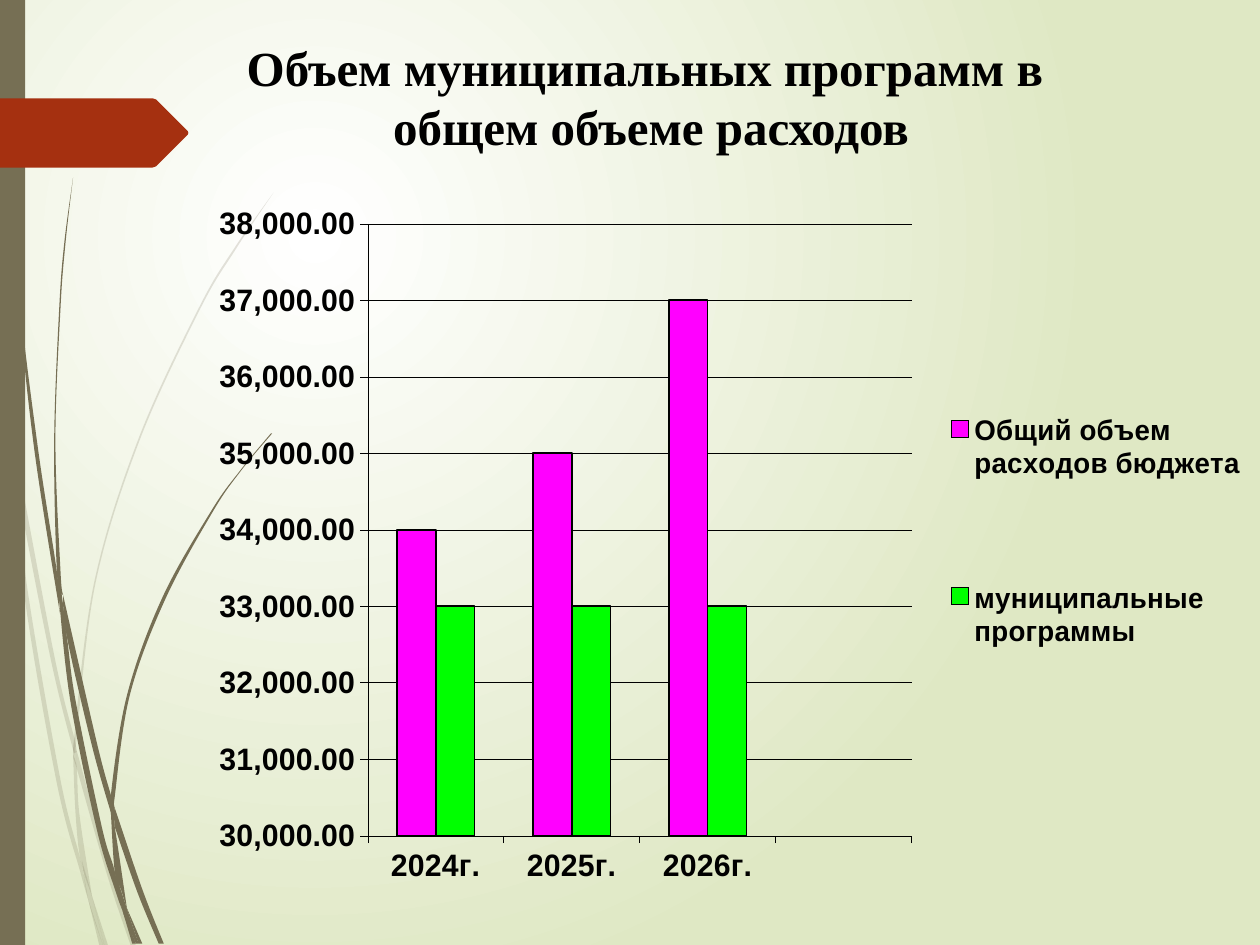
import pptx
import pptx.chart.data
import pptx.dml.color
import pptx.enum.chart
import pptx.enum.shapes
import pptx.enum.text
import pptx.oxml.ns
import pptx.util
from lxml import etree

Pt = pptx.util.Pt
qn = pptx.oxml.ns.qn

COLOURS = {
    "white": "FFFFFF", "sage": "DFE8C4", "olive": "766F54", "rust": "A53010",
    "ink": "000000", "magenta": "FF00FF", "green": "00FF00",
}
GRID = 0.72  # points in one unit of the outline coordinates below

# Each blade of grass is two edges: one out, one back
PALE_BLADES = [
    ([(8, 350), (6, 322), (0, 282)], [(0, 299), (7, 344), (8, 350)]),
    ([(10, 345), (43, 520), (59, 586)], [(59, 599), (40, 522), (12, 376), (10, 345)]),
    ([(61, 596), (88, 692), (108, 751)], [(104, 751), (85, 694), (61, 610)]),
    ([(73, 711), (86, 751)], [(83, 751), (73, 711)]),
    ([(8, 350), (12, 376), (22, 469), (48, 619), (64, 683), (70, 714)],
     [(70, 714), (64, 693), (45, 621), (19, 470), (8, 350)]),
    ([(58, 599), (61, 610), (63, 646), (73, 711)],
     [(73, 711), (64, 683), (60, 646), (58, 599)]),
    ([(61, 596), (61, 584), (76, 462), (111, 349), (159, 245), (187, 198), (217, 153)],
     [(217, 153), (186, 197), (158, 244), (110, 348), (75, 461), (59, 584), (61, 596)]),
    ([(70, 714), (82, 751)], [(79, 751), (70, 714)]),
    ([(59, 586), (61, 596), (61, 610)], [(61, 610), (58, 599), (59, 586)]),
    ([(65, 683), (73, 711), (83, 751)], [(82, 751), (70, 714), (65, 683)]),
]
DARK_BLADES = [
    ([(3, 0), (4, 48), (6, 109), (15, 232), (30, 355), (45, 453), (47, 481)],
     [(47, 481), (46, 477), (27, 355), (14, 233), (5, 110), (3, 48), (2, 0)]),
    ([(50, 472), (77, 590), (88, 631)], [(88, 645), (73, 592), (53, 505), (50, 472)]),
    ([(91, 641), (113, 706), (130, 749)], [(126, 749), (109, 708), (91, 656)]),
    ([(47, 477), (53, 505), (60, 556), (81, 657), (91, 691), (97, 722)],
     [(97, 722), (92, 708), (77, 659), (56, 557), (47, 477)]),
    ([(50, 472), (48, 453), (44, 349), (48, 245), (52, 193), (58, 141)],
     [(58, 141), (51, 193), (47, 245), (43, 349), (45, 449), (49, 472)]),
    ([(100, 719), (113, 749)], [(110, 749), (100, 719)]),
    ([(45, 449), (49, 472), (53, 505)], [(53, 505), (47, 477), (45, 449)]),
    ([(91, 641), (91, 633), (103, 552), (131, 476), (169, 406), (191, 374), (216, 344)],
     [(215, 344), (191, 373), (168, 405), (129, 474), (101, 551), (88, 631), (91, 641)]),
    ([(97, 722), (108, 749)], [(105, 749), (97, 722)]),
    ([(88, 645), (91, 656), (100, 716), (100, 719)],
     [(100, 719), (96, 706), (91, 691), (88, 645)]),
    ([(88, 631), (91, 641), (91, 656)], [(91, 656), (88, 645), (88, 631)]),
    ([(91, 691), (100, 719), (110, 749)], [(108, 749), (97, 722), (91, 691)]),
]
ARROW_TAG = [(0, 78), (121, 78), (124, 79), (149, 104), (149.5, 105.5),
             (149, 107), (124, 132), (121, 133), (0, 133)]


def rgb(name):
    return pptx.dml.color.RGBColor.from_string(COLOURS[name])


def format_font(font, *, size, face="Arial", colour="ink", bold=True):
    font.size, font.name, font.bold = Pt(size), face, bold
    font.color.rgb = rgb(colour)


def add_text(para, text, *, align=None, **font_format):
    para.alignment = align
    span = para.add_run()
    span.text = text
    format_font(span.font, **font_format)


def paint(shape, colour, opacity=100):
    shape.shadow.inherit = False
    shape.line.fill.background()
    shape.fill.solid()
    shape.fill.fore_color.rgb = rgb(colour)
    if opacity < 100:
        tone = next(shape.element.spPr.iter(qn("a:srgbClr")))
        etree.SubElement(tone, qn("a:alpha"), val=str(opacity * 1000))


def add_outline(page, points, colour, opacity=100):
    corners = [(Pt(x * GRID), Pt(y * GRID)) for x, y in points]
    builder = page.shapes.build_freeform(*corners[0])
    builder.add_line_segments(corners[1:], close=True)
    shape = builder.convert_to_shape()
    paint(shape, colour, opacity)
    return shape


def curve_edge(segments, points, left, top):
    """Turn the straight segments of one edge into smooth Bezier curves."""
    ends = [points[0], *points, points[-1]]
    for segment, a, b, c, d in zip(segments, ends, ends[1:], ends[2:], ends[3:]):
        controls = [[q + (r - p) / 6 for p, q, r in zip(a, b, c)],
                    [r - (s - q) / 6 for q, r, s in zip(b, c, d)], c]
        segment.tag = qn("a:cubicBezTo")
        segment.remove(segment[0])
        for x, y in controls:
            etree.SubElement(segment, qn("a:pt"), x=str(Pt(x * GRID) - left),
                             y=str(Pt(y * GRID) - top))


def add_blade(page, out, back, opacity):
    shape = add_outline(page, out + back, "olive", opacity)
    segments = list(shape.element.iter(qn("a:lnTo")))
    curve_edge(segments[:len(out) - 1], out, shape.left, shape.top)
    curve_edge(segments[len(out):], back, shape.left, shape.top)


def set_background(page):
    fill = page.background.fill
    fill.gradient()
    for stop, colour, position in zip(fill.gradient_stops, ("white", "sage"), (0, 1)):
        stop.color.rgb, stop.position = rgb(colour), position
    gradient = next(page.element.iter(qn("a:gradFill")))
    gradient.remove(gradient.find(qn("a:lin")))
    radial = etree.SubElement(gradient, qn("a:path"))
    radial.set("path", "circle")
    etree.SubElement(radial, qn("a:fillToRect"),
                     l="50000", t="50000", r="100000", b="100000")


def add_decoration(page, master):
    for blades, opacity in ((PALE_BLADES, 20), (DARK_BLADES, 100)):
        for out, back in blades:
            add_blade(page, out, back, opacity)
    bar = page.shapes.add_shape(pptx.enum.shapes.MSO_SHAPE.RECTANGLE,
                                0, 0, Pt(14.4), Pt(540))
    paint(bar, "olive")
    add_outline(page, ARROW_TAG, "rust")

    # The decoration belongs to the master, behind its placeholders
    tree = next(master.element.iter(qn("p:spTree")))
    parts = [shape for shape in page.shapes if not shape.is_placeholder]
    for index, part in enumerate(parts):
        next(part.element.iter(qn("p:cNvPr"))).set("id", str(100 + index))
        tree.insert(2 + index, part.element)


def add_title(page, lines):
    box = page.shapes.title
    box.left, box.top, box.width, box.height = Pt(48), Pt(18), Pt(648), Pt(108)
    frame = box.text_frame
    frame.word_wrap = True
    frame.auto_size = pptx.enum.text.MSO_AUTO_SIZE.NONE
    frame.vertical_anchor = pptx.enum.text.MSO_ANCHOR.TOP
    for index, line in enumerate(lines):
        para = frame.add_paragraph() if index else frame.paragraphs[0]
        add_text(para, line, align=pptx.enum.text.PP_ALIGN.CENTER,
                 size=28, face="Times New Roman")


def style_line(line, width):
    line.color.rgb, line.width = rgb("ink"), Pt(width)


def place_manually(part, x, y, w, h, inner=False):
    """Fix a chart part at percentages of the chart area."""
    layout = part.find(qn("c:layout"))
    if layout is None:
        layout = etree.Element(qn("c:layout"))
        if inner:
            part.insert(0, layout)
        else:
            part.find(qn("c:legendPos")).addnext(layout)
    manual = etree.SubElement(layout, qn("c:manualLayout"))
    settings = [("layoutTarget", "inner")] if inner else []
    settings += [("xMode", "edge"), ("yMode", "edge")]
    settings += [(tag, round(value / 100, 4)) for tag, value in zip("xywh", (x, y, w, h))]
    for tag, value in settings:
        etree.SubElement(manual, qn("c:" + tag), val=str(value))


def add_budget_chart(page):
    data = pptx.chart.data.CategoryChartData(number_format="#,##0.00")
    data.categories = ["2024г.", "2025г.", "2026г."]
    data.add_series("Общий объем расходов бюджета", [34000, 35000, 37000, None])
    data.add_series("муниципальные программы", [33000, 33000, 33000, None])
    chart = page.shapes.add_chart(
        pptx.enum.chart.XL_CHART_TYPE.COLUMN_CLUSTERED,
        Pt(125.3), Pt(108), Pt(594.7), Pt(423.4), data).chart
    chart.has_title = False
    format_font(chart.font, size=17.75)

    # Axes
    for axis in (chart.category_axis, chart.value_axis):
        axis.major_tick_mark = pptx.enum.chart.XL_TICK_MARK.OUTSIDE
        format_font(axis.tick_labels.font, size=17.75)
        style_line(axis.format.line, 0.25)
    values = chart.value_axis
    values.minimum_scale, values.maximum_scale, values.major_unit = 30000, 38000, 1000
    values.tick_labels.number_format = "#,##0.00"
    values.tick_labels.number_format_is_linked = False
    style_line(values.major_gridlines.format.line, 0.25)

    # Columns
    plot = chart.plots[0]
    plot.gap_width, plot.overlap, plot.vary_by_categories = 150, 0, False
    for series, colour in zip(plot.series, ("magenta", "green")):
        series.format.fill.solid()
        series.format.fill.fore_color.rgb = rgb(colour)
        style_line(series.format.line, 1)

    # Legend and plot area
    chart.has_legend = True
    chart.legend.position = pptx.enum.chart.XL_LEGEND_POSITION.RIGHT
    chart.legend.include_in_layout = False
    format_font(chart.legend.font, size=16.25)
    root = chart.element
    place_manually(next(root.iter(qn("c:plotArea"))), 11.9, 4.7, 53.7, 82.6, inner=True)
    place_manually(next(root.iter(qn("c:legend"))), 68.3, 16.7, 31, 59)


def main():
    deck = pptx.Presentation()
    deck.slide_width, deck.slide_height = Pt(720), Pt(540)
    page = deck.slides.add_slide(deck.slide_layouts[5])
    set_background(page)
    add_decoration(page, deck.slide_master)
    add_title(page, ["Объем муниципальных программ в ", "общем объеме расходов"])
    add_budget_chart(page)
    deck.save("out.pptx")


if __name__ == "__main__":
    main()
